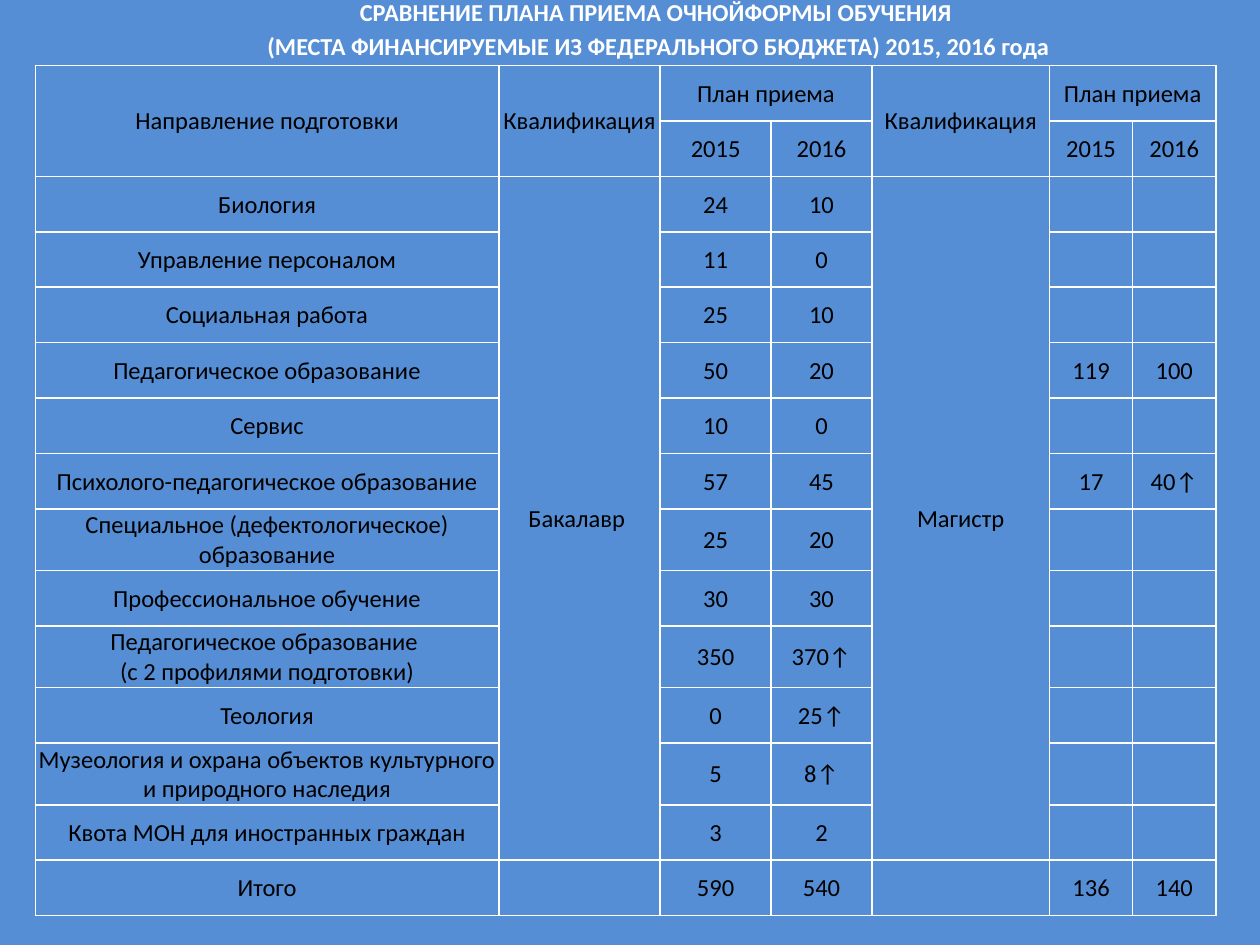
from pptx import Presentation
from pptx.dml.color import RGBColor
from pptx.enum.text import MSO_ANCHOR, MSO_AUTO_SIZE, PP_ALIGN
from pptx.oxml import parse_xml
from pptx.oxml.ns import nsdecls
from pptx.util import Inches, Pt

BLUE, WHITE, BLACK = "558ED5", "FFFFFF", "000000"
TITLE = ("СРАВНЕНИЕ ПЛАНА ПРИЕМА ОЧНОЙФОРМЫ ОБУЧЕНИЯ \n"
         "(МЕСТА ФИНАНСИРУЕМЫЕ ИЗ ФЕДЕРАЛЬНОГО БЮДЖЕТА) 2015, 2016 года")
HEAD = [
    ("Направление подготовки", "Квалификация", "План приема", "",
     "Квалификация", "План приема", ""),
    ("", "", "2015", "2016", "", "2015", "2016"),
]
PLANS = [
    ("Биология", "24", "10", "", ""),
    ("Управление персоналом", "11", "0", "", ""),
    ("Социальная работа", "25", "10", "", ""),
    ("Педагогическое образование", "50", "20", "119", "100"),
    ("Сервис", "10", "0", "", ""),
    ("Психолого-педагогическое образование", "57", "45", "17", "40↑"),
    ("Специальное (дефектологическое) образование", "25", "20", "", ""),
    ("Профессиональное обучение", "30", "30", "", ""),
    ("Педагогическое образование \n(с 2 профилями подготовки)", "350", "370↑", "", ""),
    ("Теология", "0", "25↑", "", ""),
    ("Музеология и охрана объектов культурного и природного наследия", "5", "8↑", "", ""),
    ("Квота МОН для иностранных граждан", "3", "2", "", ""),
    ("Итого", "590", "540", "136", "140"),
]
DEGREES = ("Бакалавр ", "Магистр")
WIDTHS = (3.68, 1.28, 0.88, 0.8, 1.41, 0.66, 0.66)
LOW, HIGH = 0.44, 0.49
TALL = (8, 10, 12)
MERGES = [((0, 0), (1, 0)), ((0, 1), (1, 1)), ((0, 2), (0, 3)), ((0, 4), (1, 4)),
          ((0, 5), (0, 6)), ((2, 1), (13, 1)), ((2, 4), (13, 4))]


def paint(fill, color):
    """Make a fill solid in a hex colour."""
    fill.solid()
    fill.fore_color.rgb = RGBColor.from_string(color)


def style(frame, size, color, bold=False):
    """Centre the text and format its runs."""
    for para in frame.paragraphs:
        para.alignment = PP_ALIGN.CENTER
        for run in para.runs:
            run.font.name, run.font.size, run.font.bold = "Calibri", Pt(size), bold
            paint(run.font.fill, color)


def frame_cell(cell):
    """Draw thin white borders round a cell."""
    props = cell._tc.get_or_add_tcPr()
    for side in "LRTB":
        props.append(parse_xml(
            f'<a:ln{side} {nsdecls("a")} w="{Pt(1)}"><a:solidFill>'
            f'<a:srgbClr val="{WHITE}"/></a:solidFill></a:ln{side}>'))


def add_title(slide):
    """Place the two-line heading."""
    title = slide.shapes.title
    title.left, title.top = Inches(0.98), Inches(0.21)
    title.width, title.height = Inches(8.5), Inches(0.55)
    frame = title.text_frame
    frame.text = TITLE
    frame.auto_size = MSO_AUTO_SIZE.NONE
    frame.vertical_anchor = MSO_ANCHOR.BOTTOM
    frame.margin_bottom = Inches(0.28)
    style(frame, 13.9, WHITE, True)
    for para in frame.paragraphs:
        para.space_before = Pt(2.8)


def add_plan(slide):
    """Build the admission table."""
    rows = HEAD + [(name, "", *plan[:2], "", *plan[2:]) for name, *plan in PLANS]
    high = [HIGH if i in TALL else LOW for i in range(len(rows))]
    table = slide.shapes.add_table(
        len(rows), len(WIDTHS), Inches(0.28), Inches(0.52),
        Inches(sum(WIDTHS)), Inches(sum(high))).table
    table.first_row = table.horz_banding = False
    for col, width in zip(table.columns, WIDTHS):
        col.width = Inches(width)
    for row, height, texts in zip(table.rows, high, rows):
        row.height = Inches(height)
        for cell, text in zip(row.cells, texts):
            cell.text = text
    for col, degree in zip((1, 4), DEGREES):
        table.cell(2, col).text = degree
    for start, end in MERGES:
        table.cell(*start).merge(table.cell(*end))
    for cell in table.iter_cells():
        cell.margin_left = cell.margin_right = cell.margin_top = Inches(0.01)
        cell.margin_bottom = 0
        cell.vertical_anchor = MSO_ANCHOR.MIDDLE
        frame_cell(cell)
        paint(cell.fill, BLUE)
        style(cell.text_frame, 14, BLACK)


def main():
    """Build and save the slide."""
    deck = Presentation()
    deck.slide_width, deck.slide_height = Inches(10), Inches(7.5)
    slide = deck.slides.add_slide(deck.slide_layouts[5])
    paint(slide.background.fill, BLUE)
    add_title(slide)
    add_plan(slide)
    deck.save("out.pptx")


if __name__ == "__main__":
    main()
